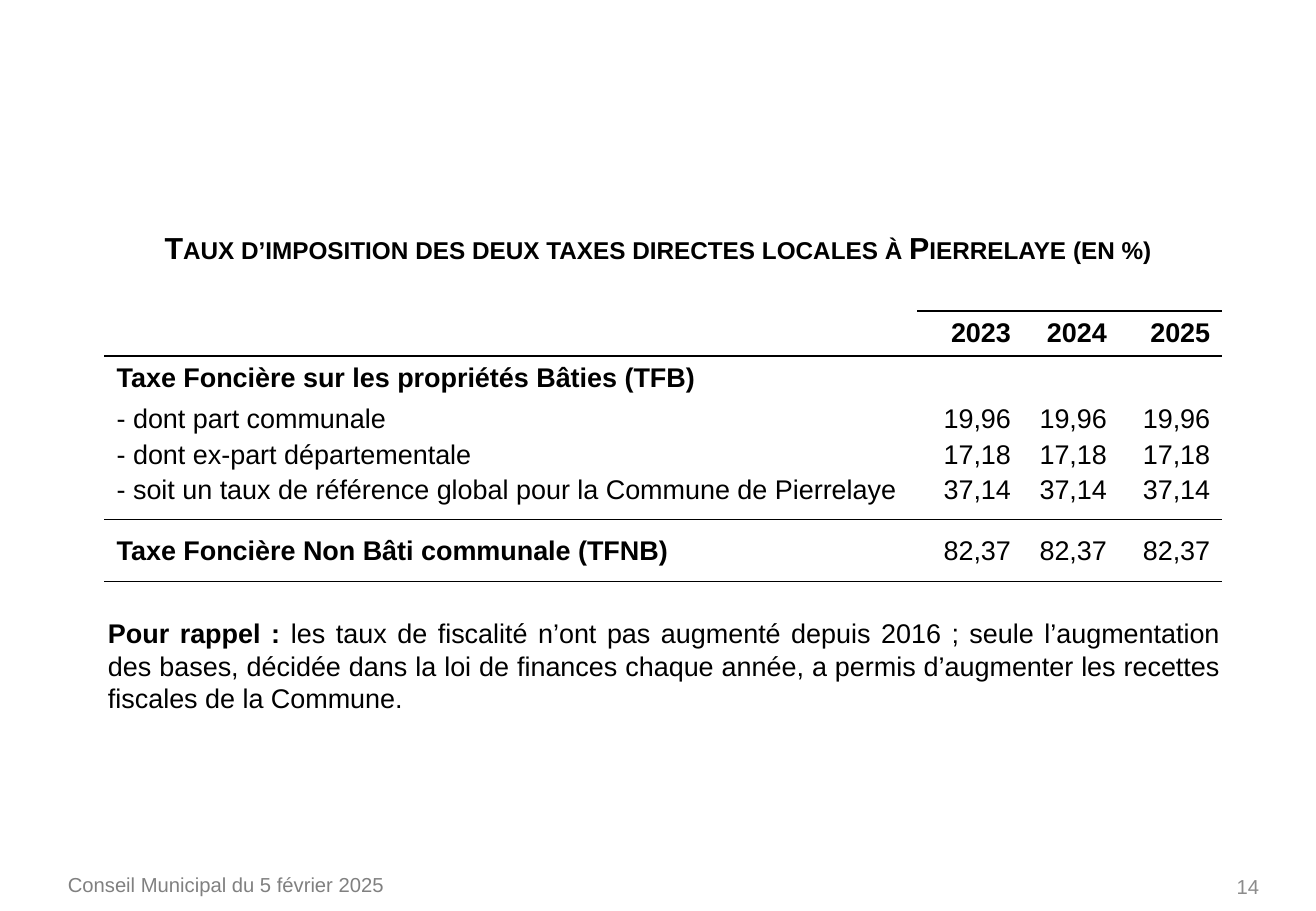
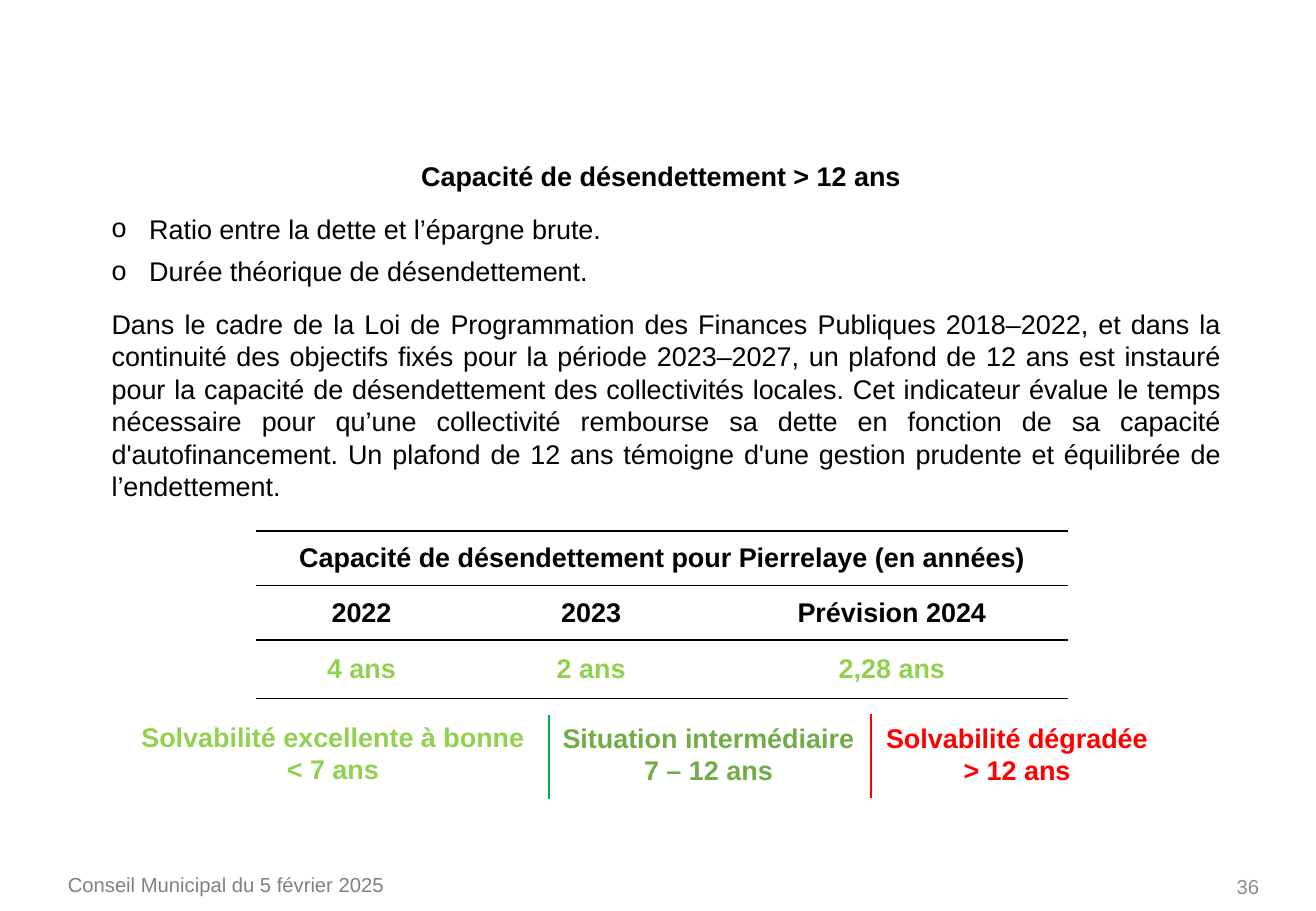
from lxml import etree
from pptx import Presentation
from pptx.dml.color import RGBColor
from pptx.enum import shapes, text
from pptx.oxml import ns
from pptx.util import Inches, Pt

FONT = "Arial"
BLACK = RGBColor(0x00, 0x00, 0x00)
FOOTER_GREY = RGBColor(0x80, 0x80, 0x80)
NUMBER_GREY = RGBColor(0x8C, 0x8C, 0x8C)
LIME = RGBColor(0x92, 0xD0, 0x50)
GREEN = RGBColor(0x70, 0xAD, 0x47)
DEEP_GREEN = RGBColor(0x00, 0xB0, 0x50)
RED = RGBColor(0xFF, 0x00, 0x00)

ALIGN = text.PP_ALIGN
ANCHOR = text.MSO_ANCHOR


def style(para, size=16, color=BLACK, bold=False, align=ALIGN.LEFT):
    para.alignment = align
    for span in para.runs:
        span.font.name = FONT
        span.font.size = Pt(size)
        span.font.color.rgb = color
        span.font.bold = bold


def add_text(page, box, lines, anchor=ANCHOR.TOP, **look):
    """Place a wrapped text box with one paragraph a line; return its paragraphs."""
    frame = page.shapes.add_textbox(*map(Inches, box)).text_frame
    frame.word_wrap = True
    frame.vertical_anchor = anchor
    frame.text = "\n".join(lines)
    for para in frame.paragraphs:
        style(para, **look)
    return frame.paragraphs


def add_page(deck, number, title, title_box, title_size):
    """Add a slide with its title, footer and page number; return slide and title run."""
    page = deck.slides.add_slide(deck.slide_layouts[5])
    holder = page.shapes.title
    holder.left, holder.top, holder.width, holder.height = map(Inches, title_box)
    frame = holder.text_frame
    frame.text = title
    frame.word_wrap = True
    frame.auto_size = text.MSO_AUTO_SIZE.NONE
    frame.vertical_anchor = ANCHOR.TOP
    style(frame.paragraphs[0], title_size, bold=True, align=ALIGN.CENTER)
    add_text(page, (0.46, 7.13, 4.49, 0.4), ["Conseil Municipal du 5 février 2025"],
             size=12, color=FOOTER_GREY)
    add_text(page, (8.02, 7.1, 2.44, 0.4), [str(number)], ANCHOR.MIDDLE,
             size=12, color=NUMBER_GREY, align=ALIGN.RIGHT)
    return page, frame.paragraphs[0].runs[0]


def set_borders(cell, ruled_sides):
    """Draw a black line on the named sides (T, B) and none on the others."""
    properties = cell._tc.get_or_add_tcPr()
    for index, side in enumerate("LRTB"):
        line = etree.Element(ns.qn("a:ln" + side), w=str(Pt(1)))
        if side in ruled_sides:
            fill = etree.SubElement(line, ns.qn("a:solidFill"))
            etree.SubElement(fill, ns.qn("a:srgbClr"), val=str(BLACK))
        else:
            etree.SubElement(line, ns.qn("a:noFill"))
        properties.insert(index, line)


def add_ruled_table(page, corner, widths, heights, rows, rules, cell_look):
    """Add a table; rules maps a row boundary to the first column it underlines."""
    frame = page.shapes.add_table(len(heights), len(widths), *map(Inches, corner),
                                  Inches(sum(widths)), Inches(sum(heights)))
    table = frame.table
    table.first_row = table.horz_banding = False
    for column, width in zip(table.columns, widths):
        column.width = Inches(width)
    for row, height in zip(table.rows, heights):
        row.height = Inches(height)
    for r, row in enumerate(rows):
        for c, words in enumerate(row):
            cell = table.cell(r, c)
            cell.text = words
            cell.margin_left = cell.margin_right = Inches(0.1)
            cell.margin_top = cell.margin_bottom = Inches(0.01)
            cell.vertical_anchor = ANCHOR.MIDDLE
            cell.fill.background()
            style(cell.text_frame.paragraphs[0], **cell_look(r, c))
            set_borders(cell, [side for side, edge in (("T", r), ("B", r + 1))
                               if edge in rules and c >= rules[edge]])
    return table


def tax_rate_look(row, column):
    return {"bold": row < 2 or (row == 5 and column == 0),
            "align": ALIGN.RIGHT if column else ALIGN.LEFT}


def build_tax_rates(deck):
    page, title = add_page(
        deck, 14, "Taux d’imposition des deux taxes directes locales à Pierrelaye (en %)",
        (1.11, 1.84, 8.61, 0.4), 18)
    title.font._element.set("cap", "small")

    rates = [("", "2023", "2024", "2025"),
             ("Taxe Foncière sur les propriétés Bâties (TFB)", "", "", "")]
    rates += [(label,) + (rate,) * 3 for label, rate in (
        ("- dont part communale", "19,96"),
        ("- dont ex-part départementale", "17,18"),
        ("- soit un taux de référence global pour la Commune de Pierrelaye", "37,14"),
        ("Taxe Foncière Non Bâti communale (TFNB)", "82,37"))]
    table = add_ruled_table(page, (0.86, 2.56), (6.69, 0.87, 0.79, 0.85),
                            (0.37, 0.37, 0.3, 0.3, 0.38, 0.51), rates,
                            {0: 1, 1: 0, 5: 0, 6: 0}, tax_rate_look)
    for column in range(4):
        table.cell(4, column).vertical_anchor = ANCHOR.TOP

    reminder = add_text(page, (0.79, 5.03, 9.35, 0.94), ["Pour rappel : "],
                        bold=True, align=ALIGN.JUSTIFY)[0]
    span = reminder.add_run()
    span.text = ("les taux de fiscalité n’ont pas augmenté depuis 2016 ; seule l’augmentation "
                 "des bases, décidée dans la loi de finances chaque année, a permis "
                 "d’augmenter les recettes fiscales de la Commune.")
    style(reminder, align=ALIGN.JUSTIFY)
    reminder.runs[0].font.bold = True


def add_bullet(para):
    properties = para._p.get_or_add_pPr()
    properties.set("marL", str(Inches(0.31)))
    properties.set("indent", str(-Inches(0.31)))
    etree.SubElement(properties, ns.qn("a:buFont"), typeface=FONT)
    etree.SubElement(properties, ns.qn("a:buChar"), char="o")


def add_separator(page, x, top, color):
    line = page.shapes.add_connector(shapes.MSO_CONNECTOR.STRAIGHT, Inches(x), Inches(top),
                                     Inches(x), Inches(top + 0.69))
    line.line.color.rgb = color
    line.line.width = Pt(1)
    etree.SubElement(line._element.spPr, ns.qn("a:effectLst"))


def debt_look(row, column):
    return {"bold": True, "align": ALIGN.CENTER, "color": LIME if row == 2 else BLACK}


def build_debt_capacity(deck):
    page, _ = add_page(deck, 36, "Capacité de désendettement > 12 ans",
                       (0.82, 1.26, 9.24, 0.4), 16)
    ratio, duration, context = add_text(page, (0.82, 1.7, 9.33, 2.5), [
        "Ratio entre la dette et l’épargne brute.",
        "Durée théorique de désendettement.",
        "Dans le cadre de la Loi de Programmation des Finances Publiques 2018–2022, et dans la "
        "continuité des objectifs fixés pour la période 2023–2027, un plafond de 12 ans est "
        "instauré pour la capacité de désendettement des collectivités locales. Cet indicateur "
        "évalue le temps nécessaire pour qu’une collectivité rembourse sa dette en fonction de "
        "sa capacité d'autofinancement. Un plafond de 12 ans témoigne d'une gestion prudente et "
        "équilibrée de l’endettement."], align=ALIGN.JUSTIFY)
    add_bullet(ratio)
    add_bullet(duration)
    duration.space_before = Pt(6)
    context.space_before = Pt(12)

    table = add_ruled_table(
        page, (2.11, 4.37), (1.73, 2.05, 2.9), (0.45, 0.45, 0.48),
        [("Capacité de désendettement pour Pierrelaye (en années)", "", ""),
         ("2022", "2023", "Prévision 2024"),
         ("4 ans", "2 ans", "2,28 ans")],
        dict.fromkeys(range(4), 0), debt_look)
    table.cell(0, 0).merge(table.cell(0, 2))

    add_separator(page, 4.52, 5.89, DEEP_GREEN)
    add_separator(page, 7.17, 5.88, RED)
    for left, top, width, color, label, years in (
            (0.78, 5.88, 3.92, LIME, "Solvabilité excellente à bonne", "< 7 ans"),
            (4.52, 5.89, 2.62, GREEN, "Situation intermédiaire", "7 – 12 ans"),
            (7.07, 5.89, 2.6, RED, "Solvabilité dégradée", "> 12 ans")):
        add_text(page, (left, top, width, 0.64), [label, years],
                 color=color, bold=True, align=ALIGN.CENTER)


def main():
    deck = Presentation()
    deck.slide_width, deck.slide_height = Inches(10.83), Inches(7.5)
    build_tax_rates(deck)
    build_debt_capacity(deck)
    deck.save("out.pptx")


if __name__ == "__main__":
    main()
